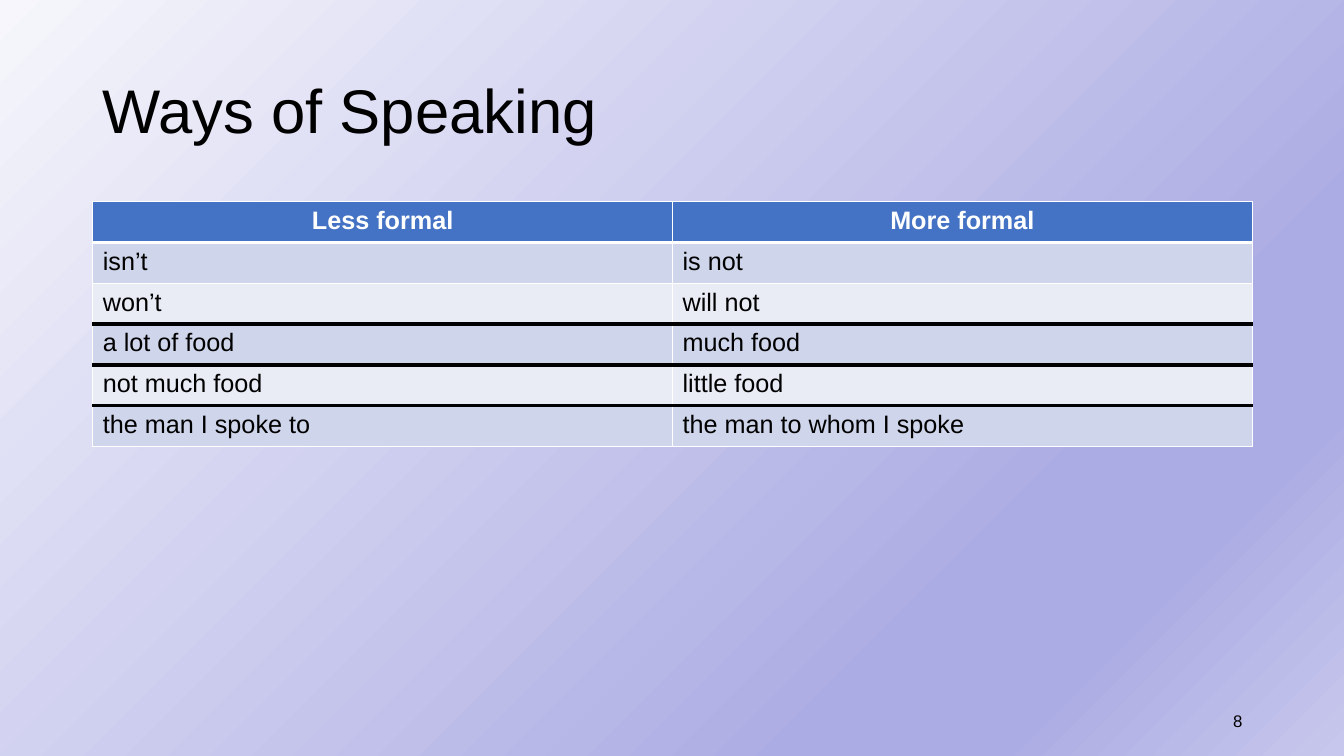
from pptx import Presentation
from pptx.dml.color import RGBColor
from pptx.enum import text
from pptx.oxml import ns
from pptx.util import Inches, Pt
from lxml import etree

COLORS = {
    "black": "000000",
    "white": "FFFFFF",
    "header": "4472C4",
    "odd row": "CFD5EA",
    "even row": "E9EBF5",
}
BACKGROUND_STOPS = [(0, "F6F6FC"), (74, "ACACE4"), (83, "ACACE4"), (100, "C7C7ED")]
PHRASES = [
    ("Less formal", "More formal"),
    ("isn’t", "is not"),
    ("won’t", "will not"),
    ("a lot of food", "much food"),
    ("not much food", "little food"),
    ("the man I spoke to", "the man to whom I spoke"),
]
# Table rules by number of rows above them; all others are thin and white
THICK_RULES = {1: "white", 3: "black", 4: "black", 5: "black"}


def write(frame, words, size, color, align, bold=False):
    frame.word_wrap = True
    para = frame.paragraphs[0]
    para.text = words
    para.alignment = align
    para.font.name = "Arial"
    para.font.size = Pt(size)
    para.font.bold = bold
    para.font.color.rgb = RGBColor.from_string(COLORS[color])
    return para


def add_border(cell, side, color, points):
    """Draw one side of a cell: L, R, T or B. Call before filling the cell."""
    properties = cell._tc.get_or_add_tcPr()
    line = etree.SubElement(properties, ns.qn(f"a:ln{side}"), w=str(Pt(points)))
    fill = etree.SubElement(line, ns.qn("a:solidFill"))
    etree.SubElement(fill, ns.qn("a:srgbClr"), val=COLORS[color])


deck = Presentation()
deck.slide_width, deck.slide_height = Inches(13.33), Inches(7.5)
page = deck.slides.add_slide(deck.slide_layouts[6])

# Background
background = page.background.fill
background.gradient()
background.gradient_angle = 315
stops = page.element.find(".//" + ns.qn("a:gsLst"))
for stop in list(stops):
    stops.remove(stop)
for percent, color in BACKGROUND_STOPS:
    stop = etree.SubElement(stops, ns.qn("a:gs"), pos=str(percent * 1000))
    etree.SubElement(stop, ns.qn("a:srgbClr"), val=color)

# Title
title = page.shapes.add_textbox(Inches(0.92), Inches(0.4), Inches(11.5), Inches(1.45))
title.text_frame.vertical_anchor = text.MSO_ANCHOR.MIDDLE
para = write(title.text_frame, "Ways of Speaking", 44, "black", text.PP_ALIGN.LEFT)
para.line_spacing = 0.9

# Table of phrases
table = page.shapes.add_table(
    len(PHRASES), 2, Inches(0.92), Inches(2), Inches(11.5), Inches(2.43)
).table
for row, phrases in enumerate(PHRASES):
    is_header = row == 0
    for column, phrase in enumerate(phrases):
        cell = table.cell(row, column)
        write(
            cell.text_frame,
            phrase,
            18,
            "white" if is_header else "black",
            text.PP_ALIGN.CENTER if is_header else text.PP_ALIGN.LEFT,
            bold=is_header,
        )
        for side in "LR":
            add_border(cell, side, "white", 1)
        for side, rule in (("T", row), ("B", row + 1)):
            thick = rule in THICK_RULES
            add_border(cell, side, THICK_RULES.get(rule, "white"), 3 if thick else 1)
        shade = "header" if is_header else "odd row" if row % 2 else "even row"
        cell.fill.solid()
        cell.fill.fore_color.rgb = RGBColor.from_string(COLORS[shade])

# Page number
number = page.shapes.add_textbox(Inches(9.42), Inches(6.95), Inches(3), Inches(0.4))
number.text_frame.vertical_anchor = text.MSO_ANCHOR.MIDDLE
write(number.text_frame, "8", 12, "black", text.PP_ALIGN.RIGHT)

deck.save("out.pptx")
